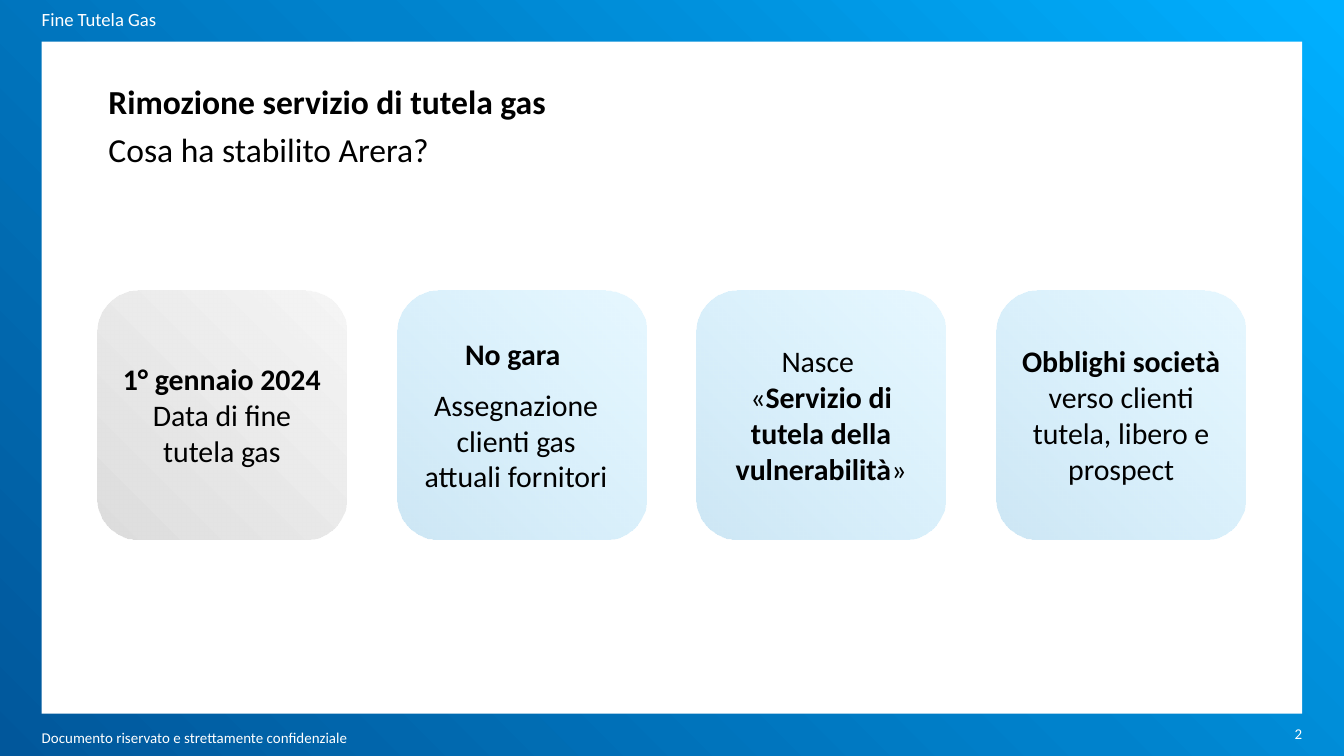
from lxml import etree
from pptx import Presentation
from pptx.dml.color import RGBColor
from pptx.enum.shapes import MSO_SHAPE
from pptx.enum.text import MSO_ANCHOR, MSO_AUTO_SIZE, PP_ALIGN
from pptx.oxml.ns import qn
from pptx.util import Cm, Pt

RECT, ROUNDED = MSO_SHAPE.RECTANGLE, MSO_SHAPE.ROUNDED_RECTANGLE
TOP, MIDDLE = MSO_ANCHOR.TOP, MSO_ANCHOR.MIDDLE
LEFT, CENTER, RIGHT = PP_ALIGN.LEFT, PP_ALIGN.CENTER, PP_ALIGN.RIGHT
NO_AUTOFIT = MSO_AUTO_SIZE.NONE

COLORS = {
    "navy": "01579B", "blue": "0082CC", "sky": "00B0FF", "ocean": "0184CD",
    "pale": "F2F2F2", "gray": "D9D9D9", "white": "FFFFFF", "black": "000000",
}
# Gradient stops: position, colour, opacity (all but the colour in percent)
FRAME_STOPS = [(0, "navy", 100), (53, "blue", 100), (100, "sky", 100)]
GRAY_STOPS = [(0, "pale", 75), (100, "gray", 90)]
BLUE_STOPS = [(0, "sky", 10), (100, "ocean", 20)]
INSETS = (0.25, 0.13, 0.25, 0.13)
WIDTH, HEIGHT, MARGIN = 25.4, 14.29, 0.79


class SlideBuilder:
    font = "Calibri"

    def __init__(self, slide):
        self.slide = slide

    def shape(self, kind, box, parent=None):
        shapes = (parent or self.slide).shapes
        shape = shapes.add_shape(kind, *map(Cm, box))
        shape.shadow.inherit = False
        shape.line.fill.background()
        return shape

    def solid(self, shape, color):
        shape.fill.solid()
        shape.fill.fore_color.rgb = RGBColor.from_string(COLORS[color])

    def gradient(self, shape, stops, angle):
        shape.fill.gradient()
        shape.fill.gradient_angle = angle
        stop_list = shape._element.spPr.find(".//" + qn("a:gsLst"))
        for old_stop in list(stop_list):
            stop_list.remove(old_stop)
        for position, color, opacity in stops:
            stop = etree.SubElement(stop_list, qn("a:gs"), pos=str(position * 1000))
            rgb = etree.SubElement(stop, qn("a:srgbClr"), val=COLORS[color])
            if opacity < 100:
                etree.SubElement(rgb, qn("a:alpha"), val=str(opacity * 1000))

    def text(self, box, paragraphs, size, color="black", align=LEFT,
             anchor=TOP, insets=INSETS, gap=0, spacing=1.0, parent=None):
        holder = (parent or self.slide).shapes.add_textbox(*map(Cm, box))
        self.fill_text(holder.text_frame, paragraphs, size, color, align, anchor,
                       insets, gap, spacing)

    def title(self, box, paragraphs, size):
        title = self.slide.shapes.title
        title.left, title.top, title.width, title.height = map(Cm, box)
        self.fill_text(title.text_frame, paragraphs, size)
        # Bring the title in front of the white panel
        self.slide.shapes._spTree.append(title._element)

    def fill_text(self, frame, paragraphs, size, color="black", align=LEFT,
                  anchor=TOP, insets=INSETS, gap=0, spacing=1.0):
        """Each paragraph is a list of (text, bold) runs; gap follows the first."""
        frame.word_wrap = True
        frame.auto_size = NO_AUTOFIT
        frame.vertical_anchor = anchor
        (frame.margin_left, frame.margin_top,
         frame.margin_right, frame.margin_bottom) = map(Cm, insets)
        for index, runs in enumerate(paragraphs):
            paragraph = frame.add_paragraph() if index else frame.paragraphs[0]
            paragraph.alignment = align
            paragraph.line_spacing = spacing
            if gap and index == 0:
                paragraph.space_after = Pt(gap)
            for words, bold in runs:
                run = paragraph.add_run()
                run.text = words
                run.font.name = self.font
                run.font.size = Pt(size)
                run.font.bold = bold
                run.font.color.rgb = RGBColor.from_string(COLORS[color])

    def card(self, box, stops, paragraphs, text_left, text_width, text_height, gap):
        left, top, width, height = box
        group = self.slide.shapes.add_group_shape()
        tile = self.shape(ROUNDED, box, group)
        self.gradient(tile, stops, 225)
        text_top = top + (height - text_height) / 2
        self.text((left + text_left, text_top, text_width, text_height), paragraphs,
                  16, align=CENTER, anchor=MIDDLE, gap=gap, parent=group)


def main():
    prs = Presentation()
    prs.slide_width, prs.slide_height = Cm(WIDTH), Cm(HEIGHT)
    builder = SlideBuilder(prs.slides.add_slide(prs.slide_layouts[5]))

    # Blue frame and white panel
    frame = builder.shape(RECT, (0, 0, WIDTH, HEIGHT))
    builder.gradient(frame, FRAME_STOPS, 45)
    panel = builder.shape(RECT, (MARGIN, MARGIN, WIDTH - 2 * MARGIN, 12.7))
    builder.solid(panel, "white")

    # Footer, page number and running header
    builder.text((0, 13.79, 8.89, 0.3),
                 [[("Documento riservato e strettamente confidenziale", False)]],
                 8, "white", anchor=MIDDLE, insets=(MARGIN, 0, 0, 0))
    builder.text((19.69, 13.49, 5.71, 0.76), [[("2", False)]],
                 8, "white", RIGHT, MIDDLE, (0, 0, MARGIN, 0))
    builder.text((MARGIN, 0.2, 18.77, 0.46), [[("Fine Tutela Gas", False)]],
                 10, "white", insets=(0, 0, 0, 0), spacing=0.9)

    # Title and subtitle
    builder.title((1.8, 1.4, 9.86, 1.02),
                  [[("Rimozione servizio di tutela gas", True)]], 18)
    builder.text((1.8, 2.31, 10.36, 1.02),
                 [[("Cosa ha stabilito Arera?", False)]], 18)

    # Cards: fill, paragraphs, text offset, text width, text height, gap
    cards = [
        (GRAY_STOPS, [[("1° gennaio 2024", True)],
                      [("Data di fine tutela gas", False)]], 0.2, 4.29, 2.31, 0),
        (BLUE_STOPS, [[("No gara ", True)],
                      [("Assegnazione clienti gas attuali fornitori", False)]],
         0.2, 4.09, 2.31, 8),
        (BLUE_STOPS, [[("Nasce ", False)],
                      [("«", False), ("Servizio di tutela della vulnerabilità", True),
                       ("»", False)]], 0.28, 4.14, 2.31, 0),
        (BLUE_STOPS, [[("Obblighi società ", True),
                       ("verso clienti tutela, libero e prospect", False)]],
         0.2, 4.32, 3, 0),
    ]
    side, pitch = 4.7, 5.66
    for index, card in enumerate(cards):
        builder.card((1.85 + index * pitch, 5.49, side, side), *card)

    prs.save("out.pptx")


if __name__ == "__main__":
    main()
